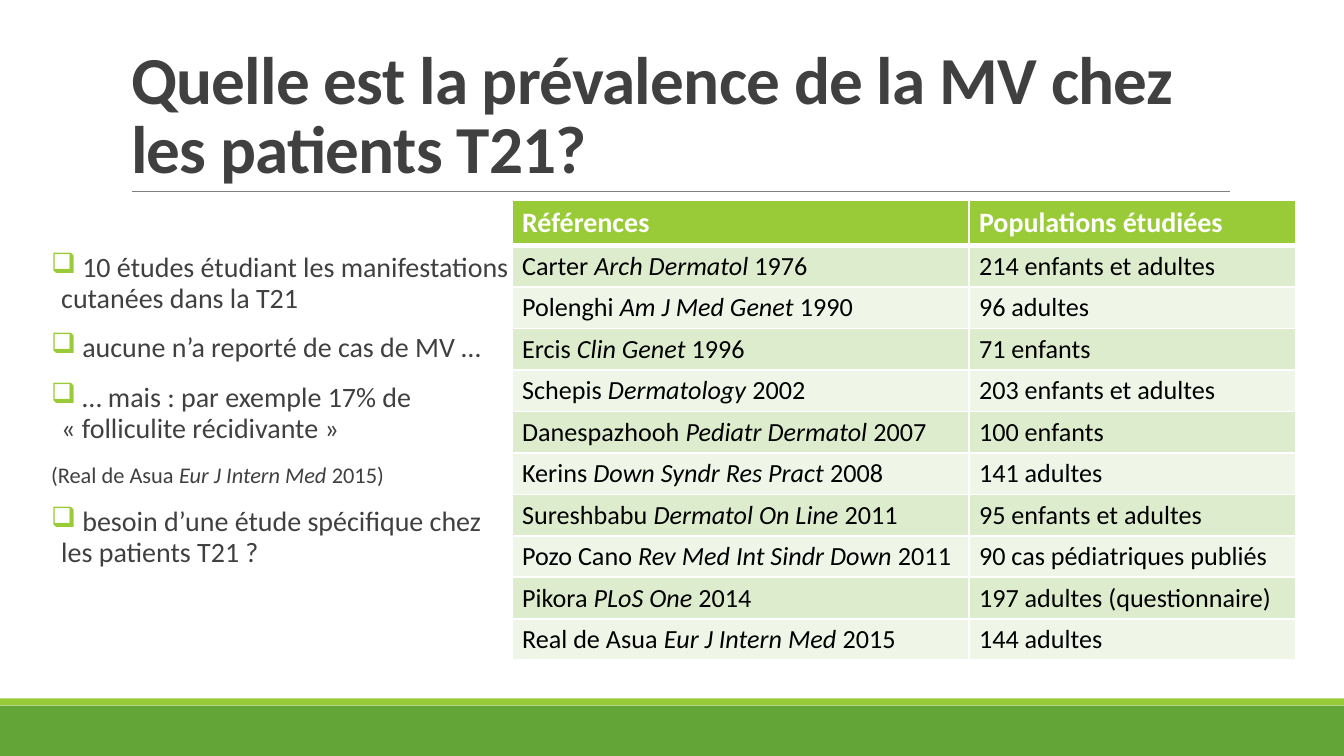
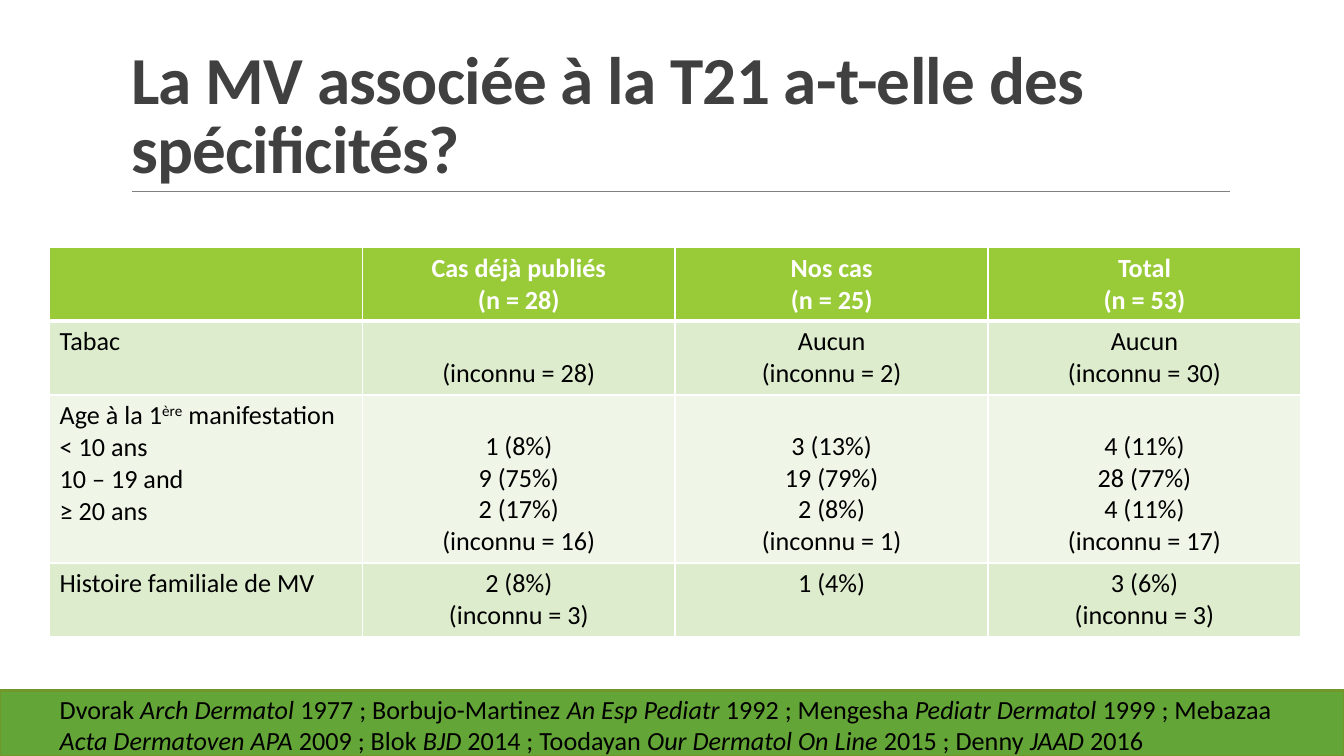
from lxml import etree
from pptx import Presentation
from pptx.dml.color import RGBColor
from pptx.enum import shapes, text
from pptx.oxml.ns import qn
from pptx.util import Pt

HEX = {"green": "63A537", "lime": "99CB38", "olive": "719629", "rule": "808080",
       "title": "404040", "ink": "000000", "white": "FFFFFF",
       "odd": "DEECCE", "even": "EFF6E8"}
RGB = {name: RGBColor.from_string(code) for name, code in HEX.items()}
PAD = {"margin_left": Pt(5.4), "margin_right": Pt(5.4),
       "margin_top": Pt(2.7), "margin_bottom": Pt(2.7)}
MID = text.PP_ALIGN.CENTER


def write(frame, lines, size, color="ink", bold=False, **form):
    """Fill a frame line by line; *...* is italic, ^...^ is superscript."""
    for n, line in enumerate(lines):
        par = frame.paragraphs[0] if n == 0 else frame.add_paragraph()
        for key, val in form.items():
            setattr(par, key, val)
        for i, part in enumerate(line.split("*")):
            for j, bit in enumerate(part.split("^")):
                if not bit:
                    continue
                run = par.add_run()
                run.text = bit
                look = {"name": "Calibri", "size": Pt(size), "bold": bold, "italic": i % 2 == 1}
                for key, val in look.items():
                    setattr(run.font, key, val)
                run.font.color.rgb = RGB[color]
                if j % 2:
                    run.font._element.set("baseline", "30000")


def grid(slide, box, cols, rows, data, head, mid):
    """Add a table; a cell text that starts with a line break sits at the bottom."""
    tab = slide.shapes.add_table(len(rows), len(cols), *map(Pt, box)).table
    for col, wide in zip(tab.columns, cols):
        col.width = Pt(wide)
    for r, (row, high) in enumerate(zip(data, rows)):
        tab.rows[r].height = Pt(high)
        for c, words in enumerate(row):
            cell = tab.cell(r, c)
            for key, val in PAD.items():
                setattr(cell, key, val)
            tint = "lime" if r == 0 else "odd" if r % 2 else "even"
            if words.startswith("\n"):
                cell.vertical_anchor = text.MSO_ANCHOR.BOTTOM
            elif r == 0 and mid:
                cell.vertical_anchor = text.MSO_ANCHOR.MIDDLE
            write(cell.text_frame, words.strip().split("\n"), 14 if r else head,
                  "ink" if r else "white", r == 0, alignment=MID if mid and c else None)
            prop = cell._tc.get_or_add_tcPr()
            for side in "LRTB":
                thick = (side == "B" and r == 0) or (side == "T" and r == 1)
                edge = etree.SubElement(prop, qn("a:ln" + side), w=str(Pt(3 if thick else 1)))
                paint = etree.SubElement(edge, qn("a:solidFill"))
                etree.SubElement(paint, qn("a:srgbClr"), val=HEX["white"])
            cell.fill.solid()
            cell.fill.fore_color.rgb = RGB[tint]


deck = Presentation()
deck.slide_width, deck.slide_height = Pt(720), Pt(405)
plan = deck.slide_layouts[5]

# Titles
pages = []
for words in ("Quelle est la prévalence de la MV chez les patients T21?",
              "La MV associée à la T21 a-t-elle des spécificités?"):
    page = deck.slides.add_slide(plan)
    head = page.shapes.title
    head.left, head.top, head.width, head.height = map(Pt, (64.8, 17.3, 594, 85.7))
    form = {**PAD, "word_wrap": True, "auto_size": text.MSO_AUTO_SIZE.NONE,
            "vertical_anchor": text.MSO_ANCHOR.BOTTOM}
    for key, val in form.items():
        setattr(head.text_frame, key, val)
    write(head.text_frame, [words], 36, "title", True,
          alignment=text.PP_ALIGN.LEFT, line_spacing=0.85)
    for prop in head.element.iter(qn("a:rPr")):
        prop.set("spc", "-40")
    pages.append(page)
study, trait = pages

# Bands: two on the shared layout, one over them on the second slide
bands = []
for page, top, high, tint in ((study, 378, 27, "green"), (study, 374.2, 3.8, "lime"),
                              (trait, 370, 35, "green")):
    band = page.shapes.add_shape(shapes.MSO_SHAPE.RECTANGLE, 0, Pt(top), Pt(720), Pt(high))
    band.shadow.inherit = False
    band.fill.solid()
    band.fill.fore_color.rgb = RGB[tint]
    band.line.fill.background()
    bands.append(band)
strip = bands.pop()
strip.line.color.rgb = RGB["olive"]
strip.line.width = Pt(1.25)

rule = study.shapes.add_connector(shapes.MSO_CONNECTOR.STRAIGHT,
                                  Pt(70.6), Pt(102.7), Pt(658.8), Pt(102.7))
rule.line.color.rgb = RGB["rule"]
rule.line.width = Pt(0.5)
etree.SubElement(rule.element.spPr, qn("a:effectLst"))
for n, item in enumerate([*bands, rule]):
    plan.shapes.element.insert(2 + n, item.element)

# Slide 1: remarks and studies
note = study.shapes.add_textbox(*map(Pt, (27.4, 133.2, 249.8, 213.8))).text_frame
form = {**PAD, "margin_left": 0, "margin_right": 0, "word_wrap": True}
for key, val in form.items():
    setattr(note, key, val)
points = [" 10 études étudiant les manifestations cutanées dans la T21",
          " aucune n’a reporté de cas de MV …",
          " … mais : par exemple 17% de «\u00a0folliculite récidivante\u00a0»".replace("\u00a0", chr(160)),
          "(Real de Asua *Eur J Intern Med *2015)",
          " besoin d’une étude spécifique chez les patients T21 ?"]
for n, line in enumerate(points):
    if n:
        note.add_paragraph()
    par = note.paragraphs[n]
    mark = line.startswith(" ")
    hold = type("Hold", (), {"paragraphs": [par]})
    write(hold, [line], 15 if mark else 12, "title",
          line_spacing=0.9, space_before=Pt(9), space_after=Pt(1.5))
    if mark:
        prop = par._p.get_or_add_pPr()
        prop.set("marL", str(Pt(5.4)))
        prop.set("indent", str(-Pt(5.4)))
        paint = etree.SubElement(prop, qn("a:buClr"))
        etree.SubElement(paint, qn("a:srgbClr"), val=HEX["lime"])
        etree.SubElement(prop, qn("a:buChar"), char="❑")

works = [("Références", "Populations étudiées"),
         ("Carter *Arch Dermatol *1976", "214 enfants et adultes"),
         ("Polenghi *Am J Med Genet *1990", "96 adultes"),
         ("Ercis *Clin Genet *1996", "71 enfants"),
         ("Schepis *Dermatology* 2002", "203 enfants et adultes"),
         ("Danespazhooh *Pediatr Dermatol *2007", "100 enfants"),
         ("Kerins *Down Syndr Res Pract* 2008", "141 adultes"),
         ("Sureshbabu *Dermatol On Line *2011", "95 enfants et adultes"),
         ("Pozo Cano *Rev Med Int Sindr Down *2011", "90 cas pédiatriques publiés"),
         ("Pikora *PLoS One *2014", "197 adultes (questionnaire)"),
         ("Real de Asua *Eur J Intern Med *2015", "144 adultes")]
grid(study, (274.3, 107.5, 419.8, 246), (244.8, 175), [24] + [22.2] * 10, works, 15, False)

# Slide 2: case features and sources
cases = [("", "Cas déjà publiés\n(n = 28)", "Nos cas\n(n = 25)", "Total\n(n = 53)"),
         ("Tabac", "\n(inconnu = 28)", "Aucun\n(inconnu = 2)", "Aucun\n(inconnu = 30)"),
         ("Age à la 1^ère^ manifestation\n< 10 ans\n10 – 19 and\n≥ 20 ans",
          "\n1 (8%)\n9 (75%)\n2 (17%)\n(inconnu = 16)",
          "\n3 (13%)\n19 (79%)\n2 (8%)\n(inconnu = 1)",
          "\n4 (11%)\n28 (77%)\n4 (11%)\n(inconnu = 17)"),
         ("Histoire familiale de MV", "2 (8%)\n(inconnu = 3)", "1 (4%)",
          "3 (6%)\n(inconnu = 3)")]
grid(trait, (26.6, 132.5, 670.4, 206.6), [167.6] * 4, (38.4, 38.4, 90, 38.4), cases, 14, True)

cite = trait.shapes.add_textbox(*map(Pt, (26.6, 368.6, 670.4, 39.6))).text_frame
for key, val in {**PAD, "word_wrap": True}.items():
    setattr(cite, key, val)
write(cite, ["Dvorak *Arch Dermatol *1977 ; Borbujo-Martinez *An Esp Pediatr *1992 ; "
             "Mengesha *Pediatr Dermatol *1999 ; Mebazaa *Acta Dermatoven APA* 2009 ; "
             "Blok *BJD* 2014 ; Toodayan *Our Dermatol On Line *2015 ; Denny *JAAD* 2016"], 14)

deck.save("out.pptx")
